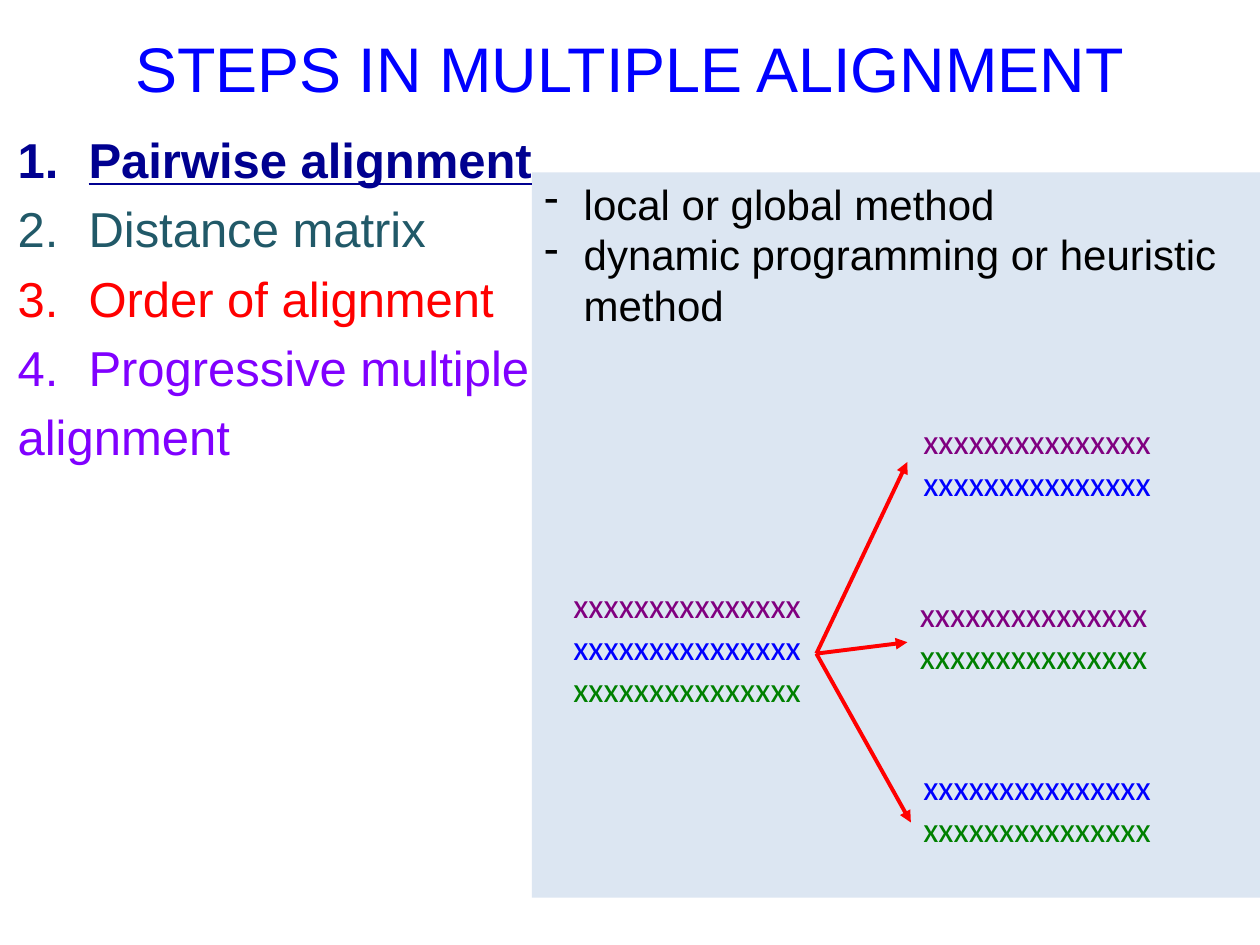
from lxml.etree import SubElement
from pptx import Presentation
from pptx.dml.color import RGBColor
from pptx.enum.shapes import MSO_CONNECTOR, MSO_SHAPE
from pptx.enum.text import MSO_ANCHOR, PP_ALIGN
from pptx.oxml.ns import qn
from pptx.util import Pt

BLUE = RGBColor(0x00, 0x00, 0xFF)
NAVY = RGBColor(0x00, 0x00, 0x90)
TEAL = RGBColor(0x21, 0x59, 0x68)
RED = RGBColor(0xFF, 0x00, 0x00)
VIOLET = RGBColor(0x80, 0x00, 0xFF)
PURPLE = RGBColor(0x80, 0x00, 0x80)
GREEN = RGBColor(0x00, 0x80, 0x00)
BLACK = RGBColor(0x00, 0x00, 0x00)
PALE_BLUE = RGBColor(0xDC, 0xE6, 0xF2)

SEQUENCE = "x" * 15
NUMBERED = ("a:buAutoNum", {"type": "arabicPeriod"})
DASHED = ("a:buChar", {"char": "-"})


class SlideBuilder:
    def __init__(self, slide):
        self.slide = slide
        self.font = "Arial"
        self.sequence_font = "Calibri"

    def text(self, box, lines, size, font=None, wrap=True):
        """Add a text box; lines are (text, colour) pairs."""
        sp = self.slide.shapes.add_textbox(*map(Pt, box))
        self.fill_text(sp.text_frame, lines, size, font, wrap)
        return sp.text_frame

    def panel(self, box, color, lines, size):
        sp = self.slide.shapes.add_shape(MSO_SHAPE.RECTANGLE, *map(Pt, box))
        sp.shadow.inherit = False
        sp.fill.solid()
        sp.fill.fore_color.rgb = color
        sp.line.fill.background()
        tf = sp.text_frame
        tf.vertical_anchor = MSO_ANCHOR.TOP
        self.fill_text(tf, lines, size)
        return tf

    def fill_text(self, tf, lines, size, font=None, wrap=True):
        tf.word_wrap = wrap
        tf.text = "\n".join(text for text, _ in lines)
        for p, (_, color) in zip(tf.paragraphs, lines):
            p.alignment = PP_ALIGN.LEFT
            for r in p.runs:
                r.font.name = font or self.font
                r.font.size = Pt(size)
                r.font.color.rgb = color

    def bullet(self, p, kind, indent):
        """Give a paragraph a hanging bullet or number."""
        tag, attributes = kind
        pPr = p._p.get_or_add_pPr()
        pPr.set("marL", str(Pt(indent)))
        pPr.set("indent", str(-Pt(indent)))
        SubElement(pPr, qn(tag), attributes)

    def sequences(self, left, top, colors):
        box = (left, top, 146, 7 + 24 * len(colors))
        lines = [(SEQUENCE, color) for color in colors]
        self.text(box, lines, 20, self.sequence_font, wrap=False)

    def arrow(self, start, end):
        line = self.slide.shapes.add_connector(
            MSO_CONNECTOR.STRAIGHT, *map(Pt, start + end))
        line.line.color.rgb = RED
        line.line.width = Pt(2.25)
        SubElement(line.line._get_or_add_ln(), qn("a:tailEnd"), type="triangle")
        SubElement(line._element.spPr, qn("a:effectLst"))


def main():
    prs = Presentation()
    prs.slide_width, prs.slide_height = Pt(720), Pt(540)
    s = SlideBuilder(prs.slides.add_slide(prs.slide_layouts[6]))

    title = s.text((54, -6.5, 612, 90), [("STEPS IN MULTIPLE ALIGNMENT", BLUE)], 36)
    title.vertical_anchor = MSO_ANCHOR.MIDDLE
    title.paragraphs[0].alignment = PP_ALIGN.CENTER

    methods = s.panel((304, 98.5, 416, 414.5), PALE_BLUE, [
        ("local or global method", BLACK),
        ("dynamic programming or heuristic method", BLACK),
    ], 24)
    for p in methods.paragraphs:
        s.bullet(p, DASHED, 22.5)

    s.sequences(320.5, 330, [PURPLE, BLUE, GREEN])
    fork = (466.5, 373.5)
    pairs = [
        ((520.5, 236), [PURPLE, BLUE], (518.5, 264)),
        ((518.5, 335), [PURPLE, GREEN], (518.5, 367)),
        ((520.5, 434), [BLUE, GREEN], (520.5, 470)),
    ]
    for position, colors, tip in pairs:
        s.sequences(*position, colors)
        s.arrow(fork, tip)

    steps = s.text((3, 70.5, 713, 361.5), [
        ("Pairwise alignment", NAVY),
        ("Distance matrix", TEAL),
        ("Order of alignment", RED),
        ("Progressive multiple", VIOLET),
        ("alignment", VIOLET),
    ], 28)
    for p in steps.paragraphs:
        p.space_after = Pt(6)
    for p in steps.paragraphs[:-1]:
        s.bullet(p, NUMBERED, 40.5)
    current = steps.paragraphs[0].runs[0].font
    current.bold = current.underline = True

    prs.save("out.pptx")


if __name__ == "__main__":
    main()
